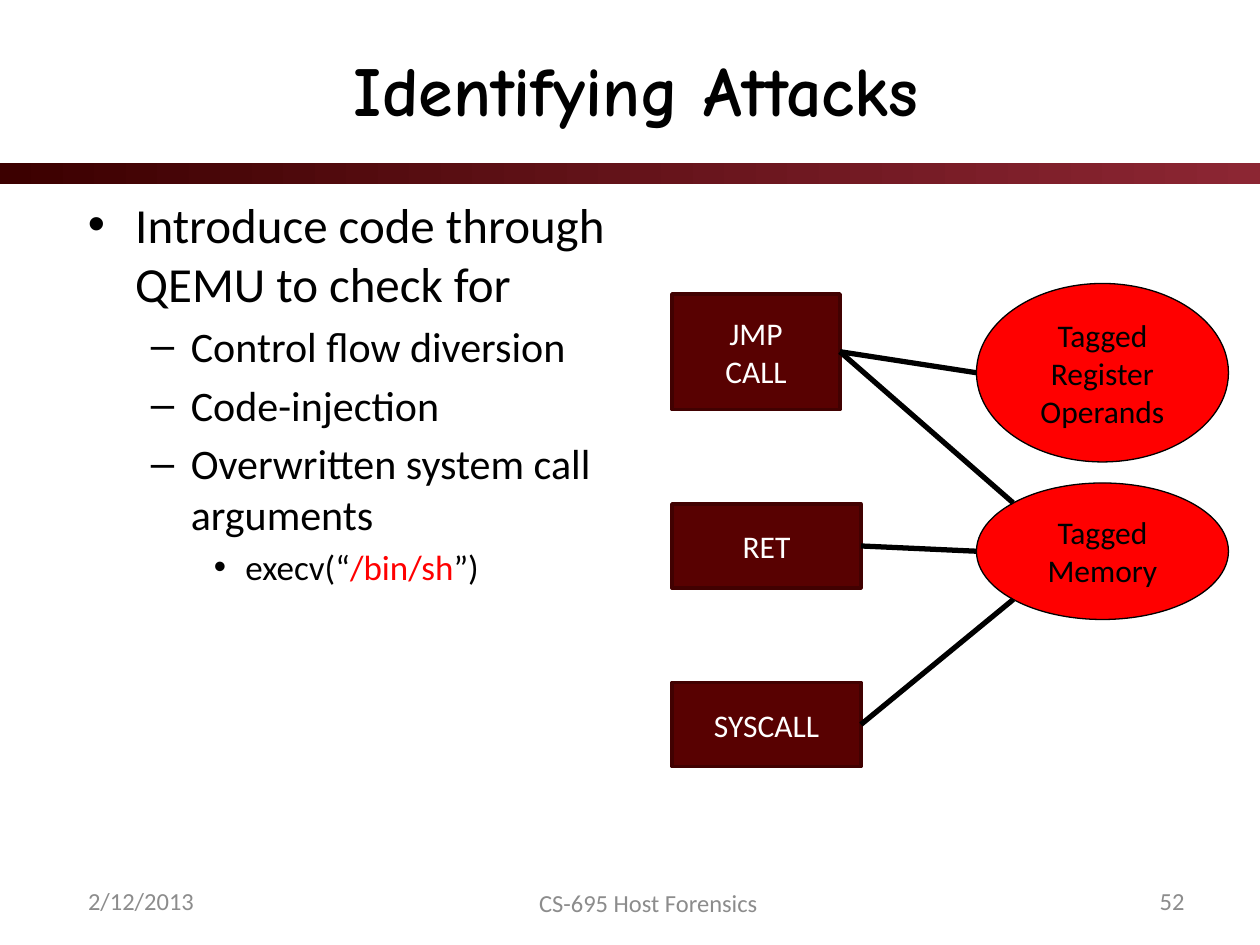
from lxml import etree
from pptx import Presentation
from pptx.dml.color import RGBColor
from pptx.enum.shapes import MSO_CONNECTOR, MSO_SHAPE
from pptx.enum.text import MSO_ANCHOR, PP_ALIGN
from pptx.oxml.ns import qn
from pptx.util import Emu, Pt

LEFT, CENTER, RIGHT = PP_ALIGN.LEFT, PP_ALIGN.CENTER, PP_ALIGN.RIGHT
MIDDLE = MSO_ANCHOR.MIDDLE
RECT, OVAL = MSO_SHAPE.RECTANGLE, MSO_SHAPE.OVAL
STRAIGHT = MSO_CONNECTOR.STRAIGHT
EMU_PER_PX = 7620  # 120 px to the inch


def px(n):
    return Emu(n * EMU_PER_PX)


def rgb(hex_string):
    return RGBColor.from_string(hex_string)


class Slide:
    BODY_FONT, TITLE_FONT = "Calibri", "Comic Neue"
    BLACK, WHITE, RED, GRAY = "000000", "FFFFFF", "FF0000", "8C8C8C"
    MAROON, MAROON_EDGE = "580101", "410101"
    BAR_START, BAR_END = "3C0000", "8C2633"
    # bullet, size in points, left indent and hanging indent in px
    LEVELS = [("•", 28, 45, 45), ("–", 24, 98, 38), ("•", 20, 150, 30)]

    def __init__(self, prs):
        self.s = prs.slides.add_slide(prs.slide_layouts[5])

    def style(self, p, size, color, align=LEFT, font=BODY_FONT, bold=False):
        p.alignment = align
        for r in p.runs:
            r.font.name, r.font.size, r.font.bold = font, Pt(size), bold
            r.font.color.rgb = rgb(color)

    def title(self, text, x, y, w, h):
        sp = self.s.shapes.title
        sp.left, sp.top, sp.width, sp.height = map(px, (x, y, w, h))
        tf = sp.text_frame
        tf.text = text
        tf.vertical_anchor = MIDDLE
        self.style(tf.paragraphs[0], 40, self.BLACK, CENTER, self.TITLE_FONT, True)

    def text_box(self, x, y, w, h):
        tf = self.s.shapes.add_textbox(*map(px, (x, y, w, h))).text_frame
        tf.word_wrap = True
        return tf

    def footer(self, text, x, y, w, h, align):
        tf = self.text_box(x, y, w, h)
        tf.text = text
        tf.vertical_anchor = MIDDLE
        self.style(tf.paragraphs[0], 14, self.GRAY, align)

    def bullets(self, items, x, y, w, h):
        """Items are (level, runs); every second run is shown in red."""
        tf = self.text_box(x, y, w, h)
        for i, (level, runs) in enumerate(items):
            p = tf.add_paragraph() if i else tf.paragraphs[0]
            bullet, size, indent, hang = self.LEVELS[level]
            pPr = p._p.get_or_add_pPr()
            pPr.set("marL", str(px(indent)))
            pPr.set("indent", str(px(-hang)))
            etree.SubElement(pPr, qn("a:buFont")).set("typeface", "Arial")
            etree.SubElement(pPr, qn("a:buChar")).set("char", bullet)
            p.level = level
            if i:
                p.space_before = Pt(size * 0.2)
            for text in runs:
                p.add_run().text = text
            self.style(p, size, self.BLACK)
            for r in p.runs[1::2]:
                r.font.color.rgb = rgb(self.RED)

    def bar(self, x, y, w, h):
        sp = self.s.shapes.add_shape(RECT, *map(px, (x, y, w, h)))
        sp.shadow.inherit = False
        sp.line.fill.background()
        sp.fill.gradient()
        sp.fill.gradient_angle = 0
        for stop, color in zip(sp.fill.gradient_stops, (self.BAR_START, self.BAR_END)):
            stop.color.rgb = rgb(color)

    def node(self, kind, text, x, y, w, h, fill, edge, edge_width, color):
        sp = self.s.shapes.add_shape(kind, *map(px, (x, y, w, h)))
        sp.shadow.inherit = False
        sp.fill.solid()
        sp.fill.fore_color.rgb = rgb(fill)
        sp.line.color.rgb = rgb(edge)
        sp.line.width = Pt(edge_width)
        tf = sp.text_frame
        tf.text = text
        tf.word_wrap = False
        tf.vertical_anchor = MIDDLE
        for p in tf.paragraphs:
            self.style(p, 18, color, CENTER)

    def instruction(self, text, x, y, w, h):
        self.node(RECT, text, x, y, w, h, self.MAROON, self.MAROON_EDGE, 2, self.WHITE)

    def tagged(self, text, x, y, w, h):
        self.node(OVAL, text, x, y, w, h, self.RED, self.BLACK, 0.75, self.BLACK)

    def link(self, x1, y1, x2, y2):
        line = self.s.shapes.add_connector(STRAIGHT, *map(px, (x1, y1, x2, y2)))
        line.line.color.rgb = rgb(self.BLACK)
        line.line.width = Pt(3)
        etree.SubElement(line._element.spPr, qn("a:effectLst"))


def main():
    prs = Presentation()
    prs.slide_width, prs.slide_height = px(1200), px(900)
    slide = Slide(prs)

    slide.bar(0, 155, 1200, 20)
    slide.title("Identifying Attacks", 72, 18, 1068, 132)
    slide.bullets([
        (0, ["Introduce code through QEMU to check for"]),
        (1, ["Control flow diversion"]),
        (1, ["Code-injection"]),
        (1, ["Overwritten system call arguments"]),
        (2, ["execv(“", "/bin/sh", "”)"]),
    ], 72, 179, 528, 640)

    slide.instruction("JMP\nCALL", 640, 280, 160, 110)
    slide.instruction("RET", 640, 480, 180, 80)
    slide.instruction("SYSCALL", 640, 650, 180, 80)
    slide.tagged("Tagged\nRegister\nOperands", 930, 270, 240, 170)
    slide.tagged("Tagged\nMemory", 930, 460, 240, 130)
    for ends in [(800, 335, 930, 355), (800, 335, 965, 479),
                 (820, 520, 930, 525), (820, 690, 965, 571)]:
        slide.link(*ends)

    slide.footer("2/12/2013", 72, 834, 220, 48, LEFT)
    slide.footer("CS-695 Host Forensics", 468, 836, 299, 48, CENTER)
    slide.footer("52", 920, 834, 220, 48, RIGHT)
    prs.save("out.pptx")


if __name__ == "__main__":
    main()
